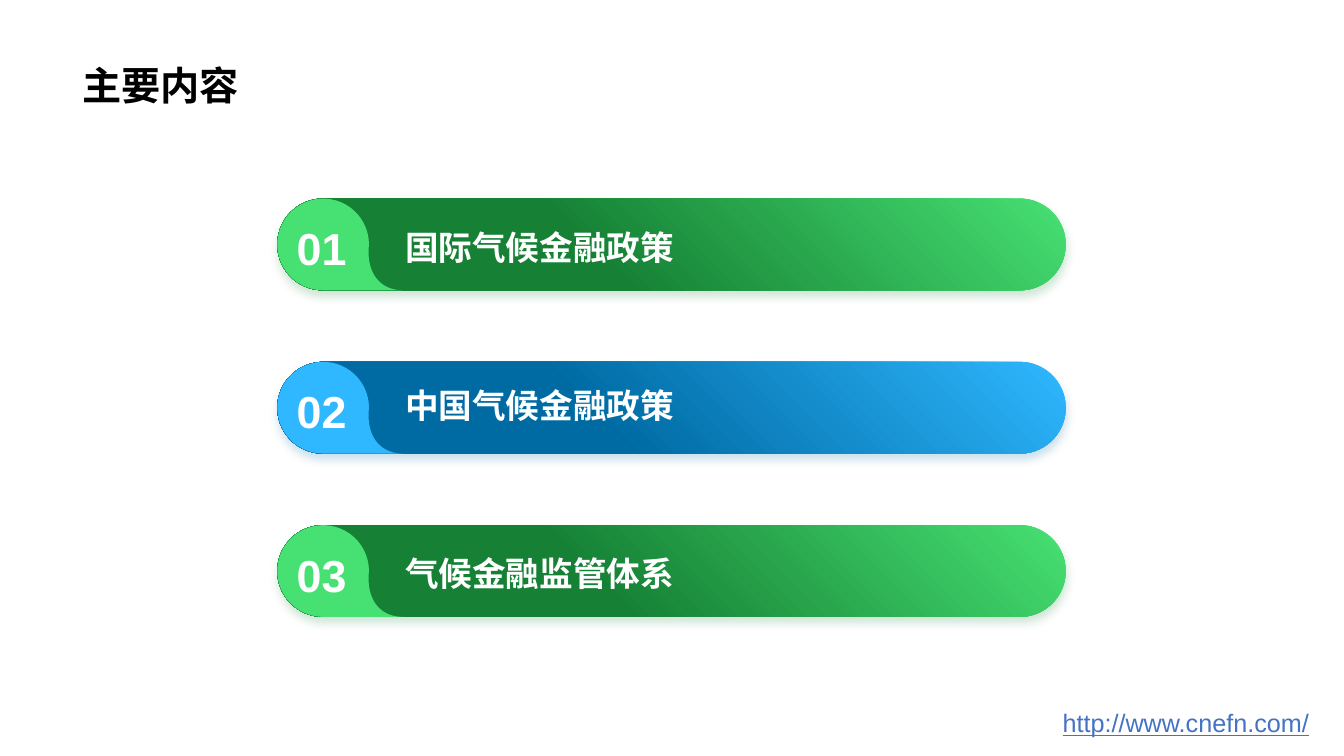
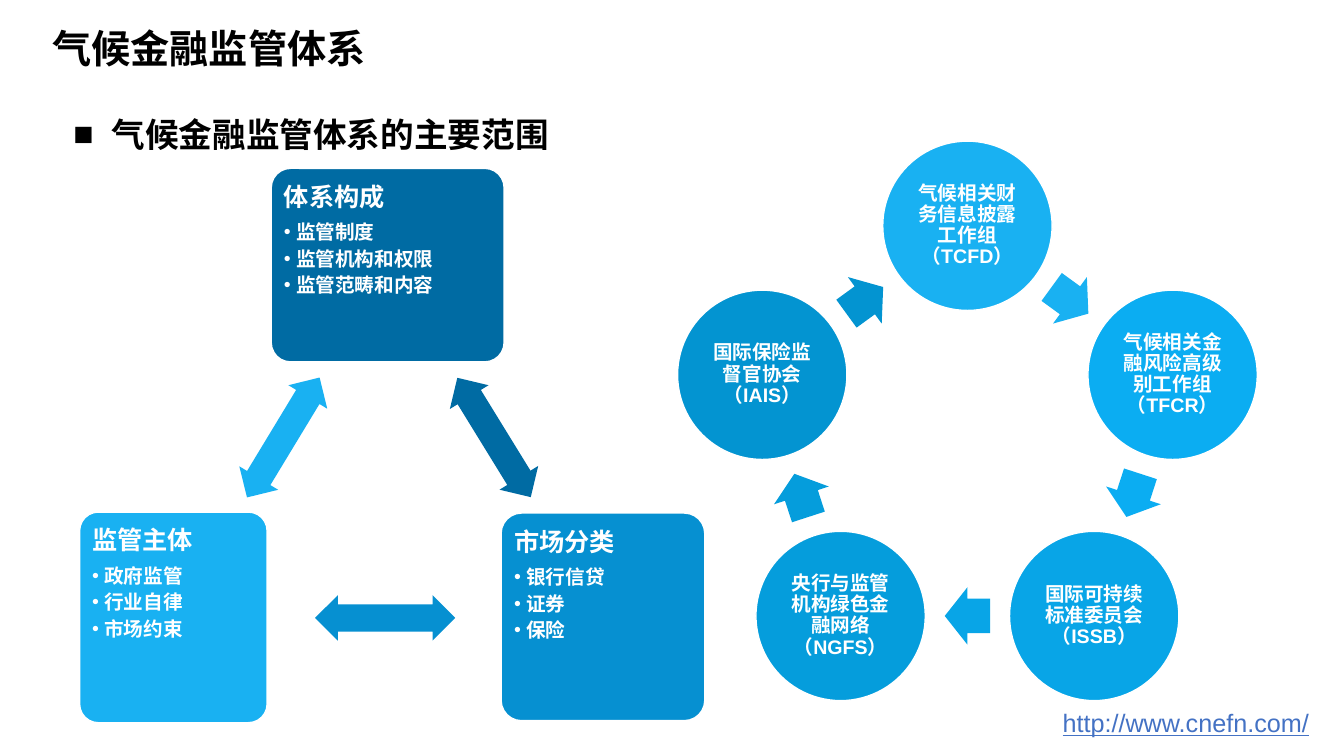
from math import cos, pi, radians, sin

from lxml.etree import SubElement
from pptx import Presentation
from pptx.dml.color import RGBColor
from pptx.enum.shapes import MSO_SHAPE
from pptx.enum.text import MSO_ANCHOR, PP_ALIGN
from pptx.oxml.ns import qn
from pptx.util import Inches, Pt

COLORS = {
    "black": "000000", "white": "FFFFFF", "link": "4472C4",
    "green": "47E073", "dark_green": "168135",
    "blue": "2FB7FF", "dark_blue": "006BA3",
    "sky": "19B1F2", "ocean": "0690D1",
    "cycle_2": "0BADF2", "cycle_3": "08A5E7", "cycle_4": "059DDC", "cycle_5": "0394D1",
}
LATIN_FONT = "Arial"
ASIAN_FONT = "Noto Sans CJK SC"

CHAPTERS = [
    ("国际气候金融政策", "green", "dark_green", 0.23),
    ("中国气候金融政策", "blue", "dark_blue", 0.18),
    ("气候金融监管体系", "green", "dark_green", 0.23),
]
CARDS = [
    ((2.69, 1.67, 2.31, 1.92), "dark_blue", "体系构成", ["监管制度", "监管机构和权限", "监管范畴和内容"]),
    ((4.97, 5.09, 2.02, 2.06), "ocean", "市场分类", ["银行信贷", "证券", "保险"]),
    ((0.79, 5.08, 1.86, 2.09), "sky", "监管主体", ["政府监管", "行业自律", "市场约束"]),
]
CARD_ARROWS = [
    (4.9, 4.34, 58.4, "dark_blue"),
    (3.82, 6.13, 180, "ocean"),
    (2.81, 4.34, 301.2, "sky"),
]
ORGANIZATIONS = [
    ("气候相关财务信息披露工作组（TCFD）", "sky"),
    ("气候相关金融风险高级别工作组（TFCR）", "cycle_2"),
    ("国际可持续标准委员会（ISSB）", "cycle_3"),
    ("央行与监管机构绿色金融网络（NGFS）", "cycle_4"),
    ("国际保险监督官协会（IAIS）", "cycle_5"),
]


def rgb(name):
    return RGBColor.from_string(COLORS[name])


def add_text(frame, text, size=14, color="white", bold=True, underline=None, align=None,
             spacing=None, after=None, bullet=None, indent=0, font=LATIN_FONT):
    para = frame.paragraphs[0]
    if para.runs:
        para = frame.add_paragraph()
    if bullet:
        properties = para._p.get_or_add_pPr()
        properties.set("marL", str(Inches(indent)))
        properties.set("indent", str(-Inches(indent)))
        SubElement(properties, qn("a:buFont"), typeface=LATIN_FONT)
        SubElement(properties, qn("a:buChar"), char=bullet)
    if align is not None:
        para.alignment = align
    if spacing:
        para.line_spacing = spacing
    if after:
        para.space_after = Pt(after)
    span = para.add_run()
    span.text = text
    span.font.size = Pt(size)
    span.font.bold = bold
    span.font.underline = underline
    span.font.color.rgb = rgb(color)
    span.font.name = font
    SubElement(span._r.get_or_add_rPr(), qn("a:ea"), typeface=ASIAN_FONT)


def prepare_frame(frame, anchor=MSO_ANCHOR.TOP, inset=None):
    frame.word_wrap = True
    frame.vertical_anchor = anchor
    if inset is not None:
        frame.margin_left = frame.margin_right = Inches(inset)
        frame.margin_top = frame.margin_bottom = Inches(inset)
    return frame


def add_label(page, box, text, anchor=MSO_ANCHOR.TOP, **style):
    label = page.shapes.add_textbox(*map(Inches, box))
    add_text(prepare_frame(label.text_frame, anchor), text, **style)


def style_shape(shape, color, outlined=False):
    shape.shadow.inherit = False
    shape.fill.solid()
    shape.fill.fore_color.rgb = rgb(color)
    if outlined:
        shape.line.color.rgb = rgb("white")
        shape.line.width = Pt(1)
    else:
        shape.line.fill.background()


def add_shape(page, kind, box, color, adjustments=(), rotation=0, outlined=False):
    shape = page.shapes.add_shape(kind, *map(Inches, box))
    for index, value in enumerate(adjustments):
        shape.adjustments[index] = value
    shape.rotation = rotation
    style_shape(shape, color, outlined)
    return shape


def add_arrow(page, kind, center, size, rotation, color):
    box = (center[0] - size[0] / 2, center[1] - size[1] / 2, *size)
    add_shape(page, kind, box, color, (0.6, 0.5), rotation)


def add_page(deck, title, title_box):
    page = deck.slides.add_slide(deck.slide_layouts[6])
    add_label(page, (10.44, 6.97, 2.74, 0.4), "http://www.cnefn.com/",
              size=18, color="link", bold=False, underline=True)
    add_label(page, title_box, title, MSO_ANCHOR.BOTTOM, size=28, color="black")
    return page


def add_glow(shape, color):
    glow = SubElement(shape._element.spPr.find(qn("a:effectLst")), qn("a:outerShdw"),
                      blurRad=str(Pt(6)), dist=str(Pt(4)), dir="5400000",
                      algn="t", rotWithShape="0")
    tint = SubElement(glow, qn("a:srgbClr"), val=COLORS[color])
    SubElement(tint, qn("a:alpha"), val="20000")


def badge_outline(left, top, height, steps=40):
    radius = height / 2
    points = []
    for step in range(steps + 1):
        angle = pi / 2 + 1.5 * pi * step / steps
        points.append((radius + radius * cos(angle), radius + radius * sin(angle)))
    curve = [(height, radius), (0.88, 0.74), (1.02, height), (1.25, height)]
    for step in range(1, steps + 1):
        t = step / steps
        weights = ((1 - t) ** 3, 3 * t * (1 - t) ** 2, 3 * t * t * (1 - t), t ** 3)
        points.append(tuple(sum(w * knot[axis] for w, knot in zip(weights, curve))
                            for axis in (0, 1)))
    return [(Inches(left + x), Inches(top + y)) for x, y in points]


def add_chapter_bar(page, box, number, text, light, dark, label_offset):
    left, top, width, height = box
    bar = add_shape(page, MSO_SHAPE.ROUNDED_RECTANGLE, box, dark, (0.5,))
    bar.fill.gradient()
    bar.fill.gradient_angle = 225
    for stop, color, position in zip(bar.fill.gradient_stops, (light, dark), (0, 0.6)):
        stop.color.rgb = rgb(color)
        stop.position = position
    add_glow(bar, dark)
    points = badge_outline(left, top, height)
    outline = page.shapes.build_freeform(*points[0], scale=1.0)
    outline.add_line_segments(points[1:], close=True)
    style_shape(outline.convert_to_shape(), light)
    add_label(page, (left + 1.17, top + label_offset, 5.7, 0.5), text, size=24)
    add_label(page, (left + 0.04, top + 0.17, 0.8, 0.64), f"{number:02d}",
              size=32, align=PP_ALIGN.CENTER)


def add_card(page, box, color, heading, items):
    card = add_shape(page, MSO_SHAPE.ROUNDED_RECTANGLE, box, color, (0.1,), outlined=True)
    frame = prepare_frame(card.text_frame, inset=0.07)
    add_text(frame, heading, size=18, align=PP_ALIGN.LEFT, after=6.3)
    for item in items:
        add_text(frame, item, align=PP_ALIGN.LEFT, after=2.1, bullet="•", indent=0.12)


def add_cycle(page, box, organizations, diameter=1.68):
    left, top, width, height = box
    step = 360 / len(organizations)
    orbit = (width - diameter) / 2 / sin(radians(step))
    center_x, center_y = left + width / 2, top + diameter / 2 + orbit

    def point_at(angle, distance):
        return (center_x + distance * sin(radians(angle)),
                center_y - distance * cos(radians(angle)))

    for index, (name, color) in enumerate(organizations):
        x, y = point_at(index * step, orbit)
        circle_box = (x - diameter / 2, y - diameter / 2, diameter, diameter)
        circle = add_shape(page, MSO_SHAPE.OVAL, circle_box, color, outlined=True)
        frame = prepare_frame(circle.text_frame, MSO_ANCHOR.MIDDLE, 0.02)
        add_text(frame, name, align=PP_ALIGN.CENTER, spacing=0.9)
        middle = (index + 0.5) * step
        arrow_center = point_at(middle, orbit * cos(radians(step / 2)))
        add_arrow(page, MSO_SHAPE.RIGHT_ARROW, arrow_center, (0.45, 0.57), middle, color)


def build_contents(deck):
    page = add_page(deck, "主要内容", (0.72, 0, 11.88, 1.12))
    for index, chapter in enumerate(CHAPTERS):
        add_chapter_bar(page, (2.75, 1.97 + 1.62 * index, 7.82, 0.91), index + 1, *chapter)


def build_supervision(deck):
    page = add_page(deck, "气候金融监管体系", (0.42, 0.15, 7.31, 0.61))
    add_label(page, (0.63, 0.88, 12.03, 0.75), "气候金融监管体系的主要范围", size=24,
              color="black", spacing=1.5, bullet="■", indent=0.38, font=ASIAN_FONT)
    for card in CARDS:
        add_card(page, *card)
    for x, y, rotation, color in CARD_ARROWS:
        add_arrow(page, MSO_SHAPE.LEFT_RIGHT_ARROW, (x, y), (1.39, 0.45), rotation, color)
    add_cycle(page, (6.72, 1.4, 5.75, 5.55), ORGANIZATIONS)


def main():
    deck = Presentation()
    deck.slide_width = Inches(13.33)
    deck.slide_height = Inches(7.5)
    build_contents(deck)
    build_supervision(deck)
    deck.save("out.pptx")


if __name__ == "__main__":
    main()
